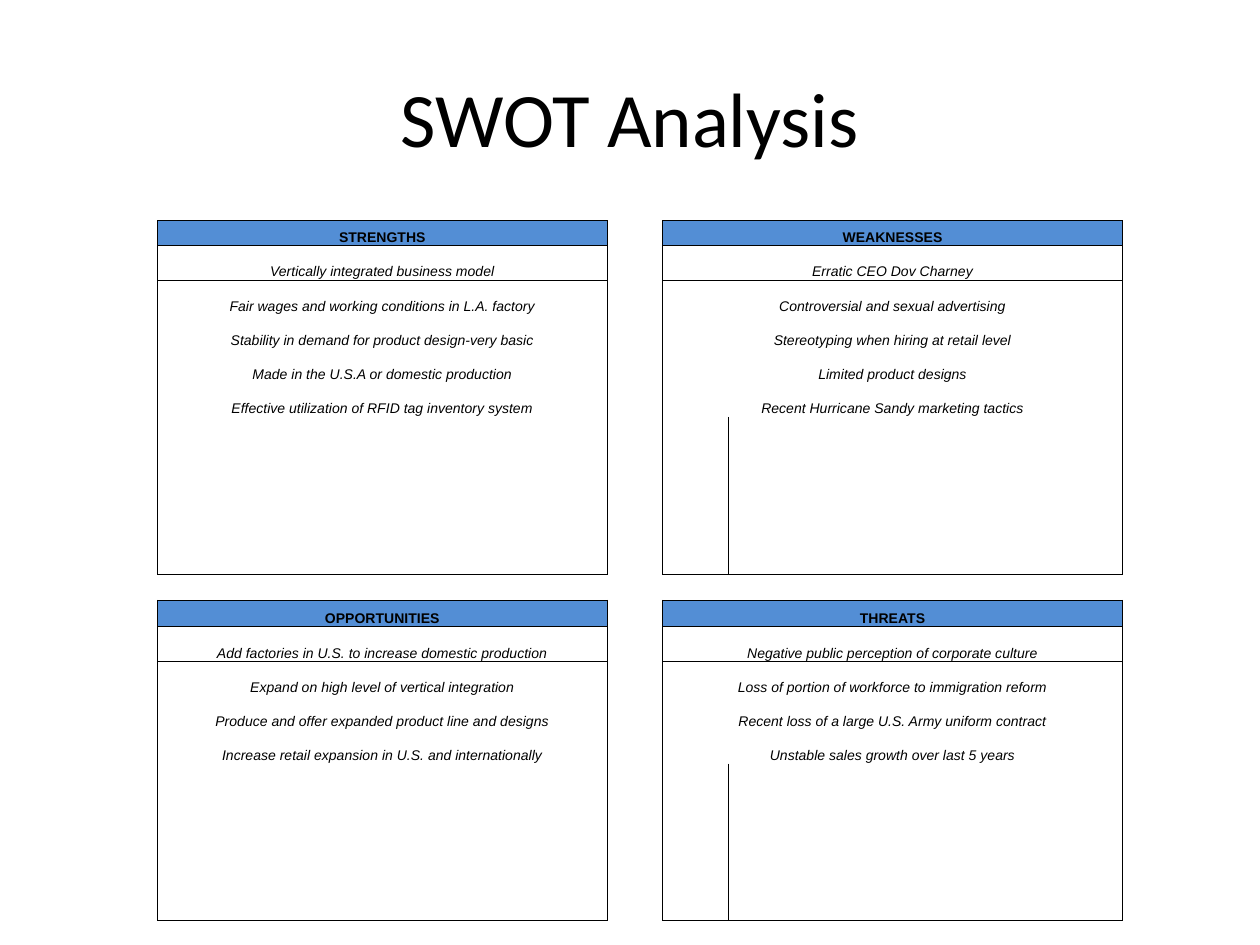
from lxml import etree
from pptx import Presentation
from pptx.dml.color import RGBColor
from pptx.enum.text import MSO_ANCHOR, PP_ALIGN
from pptx.oxml.ns import qn
from pptx.util import Inches, Pt

CENTER = PP_ALIGN.CENTER
MIDDLE, BOTTOM = MSO_ANCHOR.MIDDLE, MSO_ANCHOR.BOTTOM
BLACK = RGBColor(0x00, 0x00, 0x00)
BLUE = RGBColor(0x53, 0x8E, 0xD5)
PLAIN = "{2D5ABB26-0587-4C30-8999-92F81FD0307C}"  # no style, no grid

# Table grid in inches: each band is a head, even rows and a thin last row
WIDTH, HEIGHT = 7.67, 5.56
COLS = [0.6, 2.57, 0.4, 0.44, 0.52, 3.13]
HEAD, GAP, LAST = 0.2, 0.21, 0.16
ROW = (HEIGHT - HEAD - 2 * GAP - 2 * LAST) / 17
ROWS = [HEAD] + [ROW] * 9 + [LAST, GAP, GAP] + [ROW] * 8 + [LAST]

# Panels: first row, last row, first column, last column, heading, points
PANELS = [
    (0, 10, 0, 2, "STRENGTHS", [
        "Vertically integrated business model",
        "Fair wages and working conditions in L.A. factory",
        "Stability in demand for product design-very basic",
        "Made in the U.S.A or domestic production",
        "Effective utilization of RFID tag inventory system"]),
    (0, 10, 4, 5, "WEAKNESSES", [
        "Erratic CEO Dov Charney",
        "Controversial and sexual advertising",
        "Stereotyping when hiring at retail level",
        "Limited product designs",
        "Recent Hurricane Sandy marketing tactics"]),
    (12, 21, 0, 2, "OPPORTUNITIES", [
        "Add factories in U.S. to increase domestic production",
        "Expand on high level of vertical integration",
        "Produce and offer expanded product line and designs",
        "Increase retail expansion in U.S. and internationally"]),
    (12, 21, 4, 5, "THREATS", [
        "Negative public perception of corporate culture",
        "Loss of portion of workforce to immigration reform",
        "Recent loss of a large U.S. Army uniform contract",
        "Unstable sales growth over last 5 years"]),
]


def style(para, font, size):
    para.alignment = CENTER
    para.font.name = font
    para.font.size = Pt(size)
    para.font.color.rgb = BLACK


def add_title(slide, text):
    title = slide.shapes.title
    title.left, title.top = Inches(0.5), Inches(0.3)
    title.width, title.height = Inches(9), Inches(1.25)
    title.text_frame.text = text
    title.text_frame.vertical_anchor = MIDDLE
    style(title.text_frame.paragraphs[0], "Calibri", 44)


def add_grid(slide):
    frame = slide.shapes.add_table(
        len(ROWS), len(COLS), Inches(1.25), Inches(1.75),
        Inches(WIDTH), Inches(HEIGHT))
    table = frame.table
    table.first_row = table.horz_banding = False
    table._tbl.tblPr.find(qn("a:tableStyleId")).text = PLAIN
    for col, width in zip(table.columns, COLS):
        col.width = Inches(width)
    for row, height in zip(table.rows, ROWS):
        row.height = Inches(height)
    for cell in table.iter_cells():
        cell.margin_left = cell.margin_right = 0
        cell.margin_top = cell.margin_bottom = 0
        cell.vertical_anchor = BOTTOM
        para = cell.text_frame.paragraphs[0]
        style(para, "Arial", 8)
        # Keeps empty rows from growing
        para._p.get_or_add_endParaRPr().set("sz", "800")
    return table


def add_edges(cell, sides):
    props = cell._tc.get_or_add_tcPr()
    for side in sides:
        line = etree.SubElement(props, qn("a:ln" + side), w=str(Pt(0.5)))
        fill = etree.SubElement(line, qn("a:solidFill"))
        etree.SubElement(fill, qn("a:srgbClr"), val=str(BLACK))


def fill_panel(table, top, end, left, right, head, points):
    texts = [head] + points
    for r in range(top, end + 1):
        index = r - top
        wide = index < len(texts)
        # Outline, with a line on both sides of the heading's lower edge
        for c in range(left, right + 1):
            cell = table.cell(r, c)
            sides = "L" if c == left else ""
            sides += "R" if c == right or (wide and c == left) else ""
            sides += "T" if index < 2 else ""
            sides += "B" if r in (top, end) else ""
            add_edges(cell, sides)
            if index == 0:
                cell.fill.solid()
                cell.fill.fore_color.rgb = BLUE
            else:
                cell.fill.background()
        if wide:
            cell = table.cell(r, left)
            cell.merge(table.cell(r, right))
            para = cell.text_frame.paragraphs[0]
            para.add_run().text = texts[index]
            para.font.bold = index == 0
            para.font.italic = index > 0


def main():
    deck = Presentation()
    deck.slide_width, deck.slide_height = Inches(10), Inches(7.5)
    slide = deck.slides.add_slide(deck.slide_layouts[5])
    add_title(slide, "SWOT Analysis")
    table = add_grid(slide)
    for panel in PANELS:
        fill_panel(table, *panel)
    deck.save("out.pptx")


if __name__ == "__main__":
    main()
